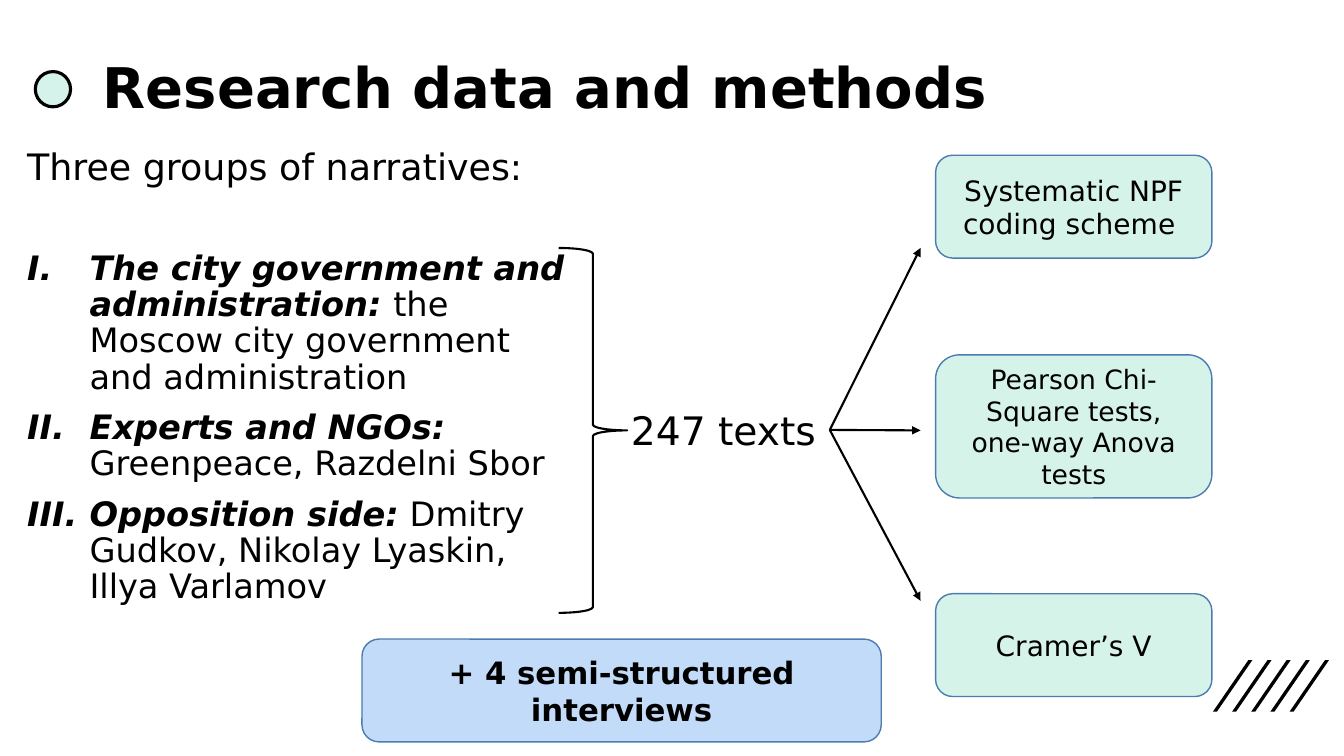
import pptx
import pptx.util
import pptx.dml.color
import pptx.enum.text
import pptx.enum.shapes
import pptx.oxml.ns
from lxml import etree

Inches = pptx.util.Inches
Pt = pptx.util.Pt
Kind = pptx.enum.shapes.MSO_SHAPE
Align = pptx.enum.text.PP_ALIGN
Anchor = pptx.enum.text.MSO_ANCHOR
Fit = pptx.enum.text.MSO_AUTO_SIZE

FONT = "DejaVu Sans"
BLACK, MINT, BLUE, EDGE = "000000", "D6F3E9", "C2DBF8", "4C7BB0"

GROUPS = [
    ("The city government and administration: ",
     "the Moscow city government and administration"),
    ("Experts and NGOs:", " Greenpeace, Razdelni Sbor"),
    ("Opposition side:", " Dmitry Gudkov, Nikolay Lyaskin, Illya Varlamov"),
]


def rgb(code):
    return pptx.dml.color.RGBColor.from_string(code)


def style(para, size, bold=None):
    font = para.font
    font.name, font.size, font.bold = FONT, Pt(size), bold
    font.color.rgb = rgb(BLACK)


def paint(shape, fill, edge=None, width=1):
    """Set fill and outline, None meaning neither, and drop the shadow."""
    shape.shadow.inherit = False
    if fill:
        shape.fill.solid()
        shape.fill.fore_color.rgb = rgb(fill)
    else:
        shape.fill.background()
    if edge:
        shape.line.color.rgb = rgb(edge)
        shape.line.width = Pt(width)
    else:
        shape.line.fill.background()


def add_shape(slide, kind, place, fill, edge, width=1):
    shape = slide.shapes.add_shape(kind, *map(Inches, place))
    paint(shape, fill, edge, width)
    return shape


def add_box(slide, place, text, size, fill=MINT, bold=None):
    box = add_shape(slide, Kind.ROUNDED_RECTANGLE, place, fill, EDGE)
    frame = box.text_frame
    frame.word_wrap = True
    frame.vertical_anchor = Anchor.MIDDLE
    para = frame.paragraphs[0]
    para.text = text
    para.alignment = Align.CENTER
    style(para, size, bold)


def add_arrow(slide, label, x, y):
    """Draw an arrow from the right side of the label to a point."""
    line = slide.shapes.add_connector(
        pptx.enum.shapes.MSO_CONNECTOR.STRAIGHT,
        label.left + label.width, label.top + label.height // 2,
        Inches(x), Inches(y))
    line.begin_connect(label, 3)
    line.line.color.rgb = rgb(BLACK)
    line.line.width = Pt(1.5)
    qn = pptx.oxml.ns.qn
    etree.SubElement(line.line._get_or_add_ln(), qn("a:tailEnd"), type="triangle")
    etree.SubElement(line._element.spPr, qn("a:effectLst"))


def add_stripes(slide):
    top, base = Inches(6.55), Inches(7.06)
    for i in range(5):
        left = 12.03 + 0.19 * i
        form = slide.shapes.build_freeform(Inches(left + 0.04), base)
        form.add_line_segments([
            (Inches(left), base),
            (Inches(left + 0.35), top),
            (Inches(left + 0.39), top),
        ])
        paint(form.convert_to_shape(), BLACK)


def set_title(slide, text):
    title = slide.shapes.title
    title.left, title.top = Inches(0.92), Inches(0.17)
    title.width, title.height = Inches(11.5), Inches(1.45)
    frame = title.text_frame
    frame.auto_size = Fit.NONE
    frame.vertical_anchor = Anchor.MIDDLE
    para = frame.paragraphs[0]
    para.text = text
    para.alignment = Align.LEFT
    para.line_spacing = 0.9
    style(para, 40, True)


def number(para):
    """Give the paragraph a Roman numeral and a hanging indent."""
    props = para._p.get_or_add_pPr()
    indent = Inches(0.62)
    props.set("marL", str(indent))
    props.set("indent", str(-indent))
    etree.SubElement(props, pptx.oxml.ns.qn("a:buAutoNum"), type="romanUcPeriod")


def add_groups(slide):
    box = slide.shapes.add_textbox(*map(Inches, (0.17, 1.43, 5.6, 5.1)))
    frame = box.text_frame
    frame.word_wrap = True
    head = frame.paragraphs[0]
    head.text = "Three groups of narratives:"
    head.line_spacing = 0.9
    style(head, 26)
    for i, (name, members) in enumerate(GROUPS):
        para = frame.add_paragraph()
        number(para)
        para.line_spacing = 0.9
        para.space_before = Pt(10 if i else 45)
        style(para, 24)
        lead = para.add_run()
        lead.text = name
        lead.font.bold = lead.font.italic = True
        para.add_run().text = members


def add_label(slide, place, text):
    label = slide.shapes.add_textbox(*map(Inches, place))
    frame = label.text_frame
    frame.word_wrap = False
    frame.auto_size = Fit.SHAPE_TO_FIT_TEXT
    frame.paragraphs[0].text = text
    style(frame.paragraphs[0], 28)
    return label


def main():
    deck = pptx.Presentation()
    deck.slide_width, deck.slide_height = Inches(13.33), Inches(7.5)
    slide = deck.slides.add_slide(deck.slide_layouts[5])

    add_stripes(slide)
    add_shape(slide, Kind.OVAL, (0.35, 0.71, 0.35, 0.35), "D5F3EA", BLACK, 2.25)
    set_title(slide, "Research data and methods")
    add_groups(slide)
    add_shape(slide, Kind.RIGHT_BRACE, (5.54, 2.46, 0.68, 3.62), None, BLACK, 1.5)
    label = add_label(slide, (6.16, 3.98, 2.07, 0.57), "247 texts")

    methods = [
        (1.54, 1.02, "Systematic NPF coding scheme ", 20, 2.46),
        (3.52, 1.42, "Pearson Chi-Square tests, one-way Anova tests", 19, 4.27),
        (5.89, 1.02, "Cramer’s V", 20, 5.96),
    ]
    for top, height, text, size, tip in methods:
        add_box(slide, (9.28, top, 2.74, height), text, size)
        add_arrow(slide, label, 9.13, tip)
    add_box(slide, (3.59, 6.34, 5.15, 1.02), "+ 4 semi-structured interviews",
            22, BLUE, True)

    deck.save("out.pptx")


if __name__ == "__main__":
    main()
